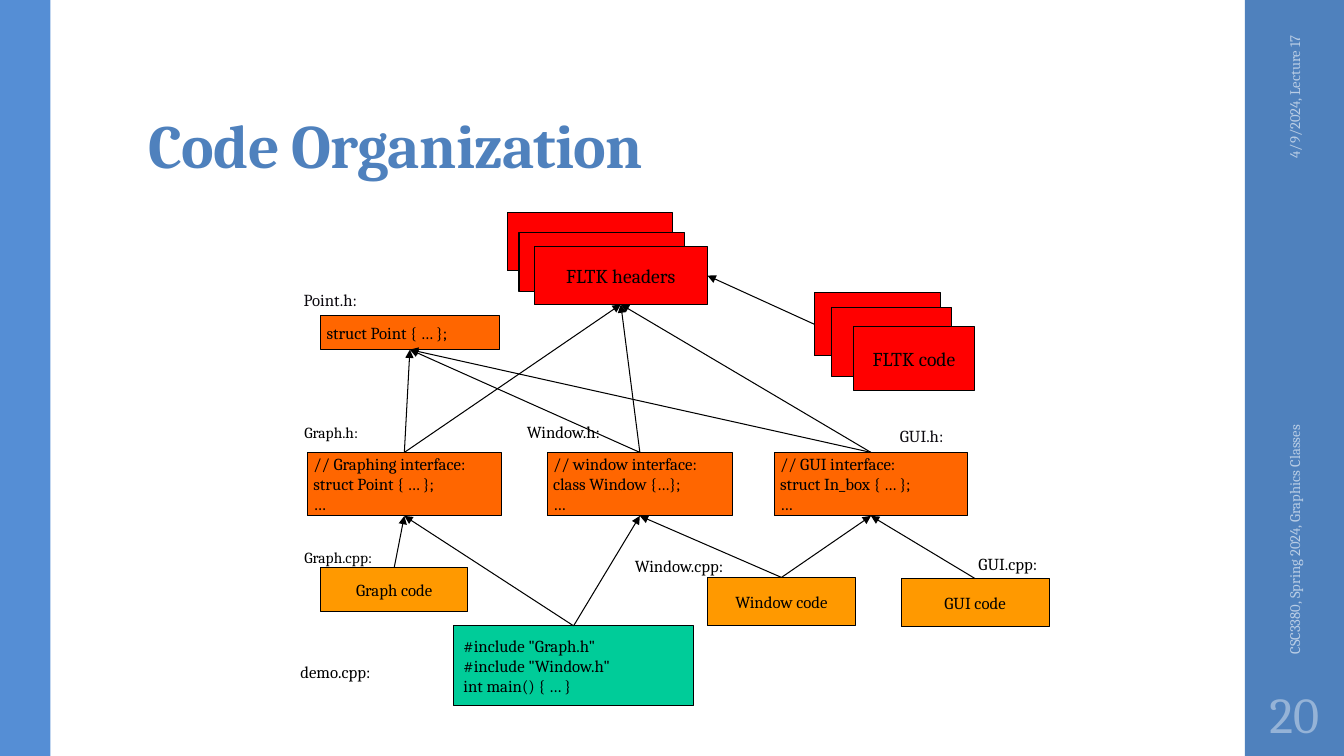
from lxml.etree import SubElement
from pptx import Presentation
from pptx.dml.color import RGBColor
from pptx.enum.shapes import MSO_CONNECTOR, MSO_SHAPE
from pptx.enum.text import MSO_ANCHOR, MSO_AUTO_SIZE, PP_ALIGN
from pptx.oxml.ns import qn
from pptx.util import Cm, Pt

FONT = "Cambria"
COLORS = {
    "title": "4F81BD",
    "sidebar": "4F81BD",
    "left_band": "558ED5",
    "sidebar_text": "B9CDE5",
    "slide_number": "95B3D7",
    "library": "FF0000",
    "header": "FF6600",
    "source": "FF9900",
    "demo": "00CC99",
    "ink": "000000",
    "soft_ink": "0D0A10",
}
WIDE_INSETS = (0.25, 0.13)
NARROW_INSETS = (0.15, 0.08)
TOP, LEFT, BOTTOM, RIGHT = range(4)

HEADER_TOP, HEADER_HEIGHT = 6.04, 1.6
BOXES = {
    "headers_back": ((5.38, 0, 4.17, 1.47), "library", []),
    "headers_middle": ((5.68, 0.51, 4.17, 1.47), "library", []),
    "headers": ((6.06, 0.86, 4.37, 1.45), "library", ["FLTK headers"]),
    "code_back": ((13.12, 2.01, 3.18, 1.6), "library", []),
    "code_middle": ((13.56, 2.39, 3.02, 1.73), "library", []),
    "code": ((14.11, 2.87, 3.05, 1.6), "library", ["FLTK code"]),
    "point_h": ((0.68, 2.59, 4.5, 0.86), "header", ["struct Point { … };"]),
    "graph_h": ((0.35, HEADER_TOP, 4.88, HEADER_HEIGHT), "header",
                ["// Graphing interface:", "struct Point { … };", "…"]),
    "window_h": ((6.39, HEADER_TOP, 4.67, HEADER_HEIGHT), "header",
                 ["// window interface:", "class Window {…};", "…"]),
    "gui_h": ((12.11, HEADER_TOP, 4.88, HEADER_HEIGHT), "header",
              ["// GUI interface:", "struct In_box { … };", "…"]),
    "graph_cpp": ((0.68, 8.94, 3.71, 1.12), "source", ["Graph code"]),
    "window_cpp": ((10.43, 9.19, 3.73, 1.22), "source", ["Window code"]),
    "gui_cpp": ((15.31, 9.22, 3.73, 1.22), "source", ["GUI code"]),
    "demo_cpp": ((4.03, 10.41, 6.05, 2.01), "demo",
                 ['#include "Graph.h"', '#include "Window.h"', "int main() { … }"]),
}
LABELS = [
    ("Point.h:", (0, 1.8, 2.29, 0.76), 12, "soft_ink", WIDE_INSETS),
    ("GUI.h:", (15.03, 5.23, 2.29, 0.76), 12, "soft_ink", WIDE_INSETS),
    ("Graph.h:", (0.02, 5.18, 2.69, 0.74), 11, "ink", WIDE_INSETS),
    ("Graph.cpp:", (0.02, 8.31, 3.35, 0.74), 11, "ink", WIDE_INSETS),
    ("Window.h:", (5.73, 5.18, 2.69, 0.69), 12, "ink", NARROW_INSETS),
    ("Window.cpp:", (8.45, 8.56, 2.97, 0.69), 12, "ink", NARROW_INSETS),
    ("GUI.cpp:", (17.11, 8.51, 2.36, 0.69), 12, "ink", NARROW_INSETS),
    ("demo.cpp:", (0.02, 11.23, 3.45, 0.69), 12, "ink", NARROW_INSETS),
]
UPWARD_ARROWS = [
    ("demo_cpp", ["graph_h", "window_h"]),
    ("graph_cpp", ["graph_h"]),
    ("window_cpp", ["window_h", "gui_h"]),
    ("gui_cpp", ["gui_h"]),
    ("graph_h", ["headers", "point_h"]),
    ("window_h", ["headers", "point_h"]),
    ("gui_h", ["headers", "point_h"]),
]


def color(name):
    return RGBColor.from_string(COLORS[name])


def write_text(shape, lines, size, text_color, insets=WIDE_INSETS,
               alignment=PP_ALIGN.LEFT, anchor=MSO_ANCHOR.MIDDLE):
    frame = shape.text_frame
    frame.word_wrap = True
    frame.vertical_anchor = anchor
    frame.margin_left = frame.margin_right = Cm(insets[0])
    frame.margin_top = frame.margin_bottom = Cm(insets[1])
    for index, line in enumerate(lines):
        paragraph = frame.add_paragraph() if index else frame.paragraphs[0]
        paragraph.alignment = alignment
        run = paragraph.add_run()
        run.text = line
        run.font.name = FONT
        run.font.size = Pt(size)
        run.font.color.rgb = color(text_color)


def add_rectangle(slide, box, fill, outlined=False):
    shape = slide.shapes.add_shape(MSO_SHAPE.RECTANGLE, *map(Cm, box))
    shape.shadow.inherit = False
    shape.fill.solid()
    shape.fill.fore_color.rgb = color(fill)
    if outlined:
        shape.line.color.rgb = color("ink")
        shape.line.width = Pt(0.75)
    else:
        shape.line.fill.background()
    return shape


def add_arrow(slide, start, start_side, end, end_side):
    connector = slide.shapes.add_connector(MSO_CONNECTOR.STRAIGHT, 0, 0, 0, 0)
    connector.begin_connect(start, start_side)
    connector.end_connect(end, end_side)
    connector.line.color.rgb = color("ink")
    connector.line.width = Pt(0.75)
    line = connector.line._get_or_add_ln()
    SubElement(line, qn("a:tailEnd"), type="triangle")
    SubElement(connector._element.spPr, qn("a:effectLst"))


def add_title(slide, box):
    title = slide.shapes.title
    title.left, title.top, title.width, title.height = map(Cm, box)
    write_text(title, ["Code Organization"], 44, "title", anchor=MSO_ANCHOR.BOTTOM)
    title.text_frame.auto_size = MSO_AUTO_SIZE.NONE
    title.text_frame.margin_top = Cm(0.08)
    paragraph = title.text_frame.paragraphs[0]
    paragraph.line_spacing = 0.9
    run = paragraph.runs[0]
    run.font.bold = True
    run.font._element.set("spc", "-50")


def add_sidebar(slide, box):
    left, top, width, height = box
    add_rectangle(slide, box, "sidebar")
    thickness = 1.02
    for text, center, length, alignment in [
        ("4/9/2024, Lecture 17", 3.28, 5.28, PP_ALIGN.RIGHT),
        ("CSC3380, Spring 2024, Graphics Classes", 11.76, 9.96, PP_ALIGN.LEFT),
    ]:
        place = (left + (width - length) / 2, top + center - thickness / 2,
                 length, thickness)
        caption = slide.shapes.add_textbox(*map(Cm, place))
        caption.rotation = 270
        write_text(caption, [text], 10.5, "sidebar_text", alignment=alignment)
    number = slide.shapes.add_textbox(
        *map(Cm, (left, top + height - 1.9, width, 1.65)))
    write_text(number, ["20"], 36, "slide_number", (0.13, 0.13), PP_ALIGN.CENTER)


def add_diagram(slide, left, top):
    def place(box):
        return (left + box[0], top + box[1], box[2], box[3])

    shapes = {}
    for name, (box, kind, lines) in BOXES.items():
        shape = shapes[name] = add_rectangle(slide, place(box), kind, outlined=True)
        centered = kind in ("library", "source")
        write_text(shape, lines, 14 if kind == "library" else 12, "ink",
                   WIDE_INSETS if kind == "demo" else NARROW_INSETS,
                   PP_ALIGN.CENTER if centered else PP_ALIGN.LEFT)

    for start, ends in UPWARD_ARROWS:
        for end in ends:
            add_arrow(slide, shapes[start], TOP, shapes[end], BOTTOM)
    add_arrow(slide, shapes["code_back"], LEFT, shapes["headers"], RIGHT)

    for text, box, size, ink, insets in LABELS:
        label = slide.shapes.add_textbox(*map(Cm, place(box)))
        write_text(label, [text], size, ink, insets, anchor=MSO_ANCHOR.TOP)


def main():
    presentation = Presentation()
    presentation.slide_width = Cm(33.87)
    presentation.slide_height = Cm(19.05)
    slide = presentation.slides.add_slide(presentation.slide_layouts[5])
    add_rectangle(slide, (0, 0, 1.27, 19.05), "left_band")
    add_sidebar(slide, (31.37, 0, 2.5, 19.05))
    add_title(slide, (3.5, 0.81, 26.92, 3.89))
    add_diagram(slide, 7.4, 5.36)
    presentation.save("out.pptx")


if __name__ == "__main__":
    main()
